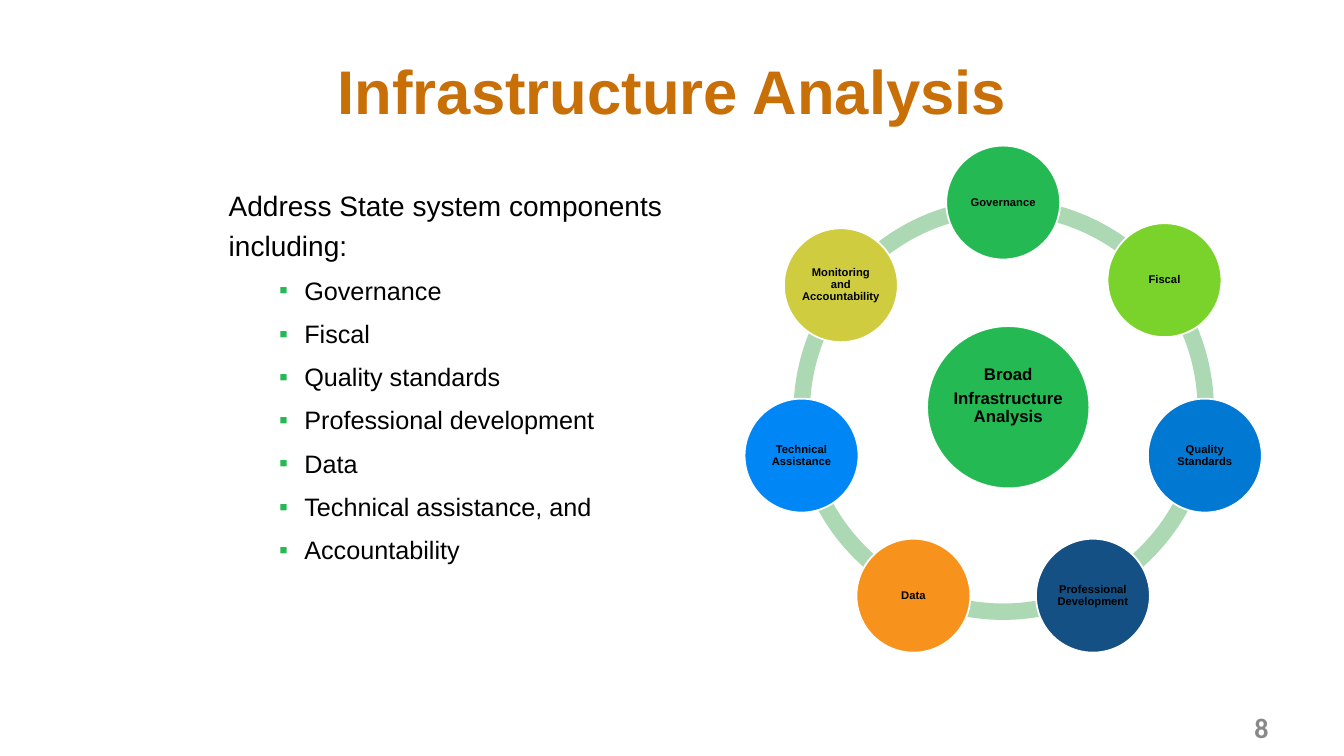
from math import cos, radians, sin

from pptx import Presentation
from pptx.dml.color import RGBColor
from pptx.enum.shapes import MSO_SHAPE as Shape
from pptx.enum.text import MSO_ANCHOR as Anchor, PP_ALIGN as Align
from pptx.oxml import parse_xml
from pptx.oxml.ns import nsdecls
from pptx.util import Pt

PX = 9144  # 100 px to the inch
INK = "000000"
GREEN = "24B953"

deck = Presentation()
deck.slide_width, deck.slide_height = 1333 * PX, 750 * PX
slide = deck.slides.add_slide(deck.slide_layouts[6])
shapes = slide.shapes


def color(code):
    return RGBColor.from_string(code)


def write(frame, lines, size, tint=INK, bold=True, align=Align.CENTER, face="Arial"):
    """Fill a text frame with one paragraph per line and return the paragraphs."""
    frame.word_wrap = True
    for i, line in enumerate(lines):
        para = frame.add_paragraph() if i else frame.paragraphs[0]
        para.alignment = align
        run = para.add_run()
        run.text = line
        font = run.font
        font.name, font.size, font.bold = face, Pt(size), bold
        font.color.rgb = color(tint)
    return frame.paragraphs


# Title
box = shapes.add_textbox(217 * PX, 42 * PX, 900 * PX, 125 * PX)
box.text_frame.margin_top = 10 * PX
write(box.text_frame, ["Infrastructure Analysis"], 44, "C86F07")

# Component list
box = shapes.add_textbox(217 * PX, 175 * PX, 492 * PX, 495 * PX)
intro = "Address State system components including:"
parts = ["Governance", "Fiscal", "Quality standards", "Professional development",
         "Data", "Technical assistance, and", "Accountability"]
paras = write(box.text_frame, [intro] + parts, 18, bold=False, align=Align.LEFT)
paras[0].runs[0].font.size = Pt(20)
for i, para in enumerate(paras):
    para.line_spacing = 1.2
    if i:
        para.space_before = Pt(5)
        para.level = 1
        props = para._p.get_or_add_pPr()
        props.set("marL", str(75 * PX))
        props.set("indent", str(-25 * PX))
        for tag in (f'<a:buClr {nsdecls("a")}><a:srgbClr val="{GREEN}"/></a:buClr>',
                    f'<a:buFont {nsdecls("a")} typeface="Arial"/>',
                    f'<a:buChar {nsdecls("a")} char="▪"/>'):
            props.append(parse_xml(tag))

# Ring: one arc from each node to the next
MID_X, MID_Y = 995, 406
STEP = 360 / 7
BAND = 418
# arc number: shift in x and y (px), shift of start and end (degrees)
SHIFTS = {5: (1, 3, 0.73, -0.81), 6: (3, 0, -1.71, -0.71)}
for i in range(7):
    dx, dy, head, tail = SHIFTS.get(i, (0, 0, 0, 0))
    arc = shapes.add_shape(Shape.BLOCK_ARC, (MID_X - BAND // 2 + dx) * PX,
                           (MID_Y - BAND // 2 + dy) * PX, BAND * PX, BAND * PX)
    start = 270 + i * STEP
    # an angle adjustment counts 0.6 per degree
    arc.adjustments[0] = (start + head) % 360 * 0.6
    arc.adjustments[1] = (start + STEP + tail) % 360 * 0.6
    arc.adjustments[2] = 0.039
    arc.shadow.inherit = False
    arc.fill.solid()
    arc.fill.fore_color.rgb = color("ACD9B3")
    arc.line.fill.background()

# Hub and nodes: lines, fill, centre, diameter, text size, inset, bottom inset
discs = [(["Broad", "Infrastructure Analysis"], GREEN, 1000, 404, 161, 12, 2, 25)]
nodes = [("Governance", GREEN), ("Fiscal", "79D32A"), ("Quality Standards", "0178D2"),
         ("Professional Development", "145083"), ("Data", "F7931D"),
         ("Technical Assistance", "0087F5"), ("Monitoring and Accountability", "CFCC40")]
for i, (name, fill) in enumerate(nodes):
    turn = radians(i * STEP)
    x = round(MID_X + 205 * sin(turn))
    y = round(MID_Y - 205 * cos(turn))
    if i == 6:  # the last node sits a little lower
        x, y = x - 1, y + 5
    discs.append(([name], fill, x, y, 113, 8, 1, 1))

for lines, fill, x, y, wide, size, inset, foot in discs:
    disc = shapes.add_shape(Shape.OVAL, round((x - wide / 2) * PX),
                            round((y - wide / 2) * PX), wide * PX, wide * PX)
    disc.shadow.inherit = False
    disc.fill.solid()
    disc.fill.fore_color.rgb = color(fill)
    disc.line.color.rgb = color("FFFFFF")
    disc.line.width = Pt(1.25)
    frame = disc.text_frame
    frame.vertical_anchor = Anchor.MIDDLE
    frame.margin_left = frame.margin_right = frame.margin_top = inset * PX
    frame.margin_bottom = foot * PX
    paras = write(frame, lines, size)
    for para in paras:
        para.line_spacing = 0.9
    for para in paras[:-1]:
        para.space_after = Pt(4.2)

# Slide number
box = shapes.add_textbox(1133 * PX, 694 * PX, 135 * PX, 55 * PX)
box.text_frame.vertical_anchor = Anchor.MIDDLE
write(box.text_frame, ["8"], 20, "898989", align=Align.RIGHT, face="Calibri")

deck.save("out.pptx")
